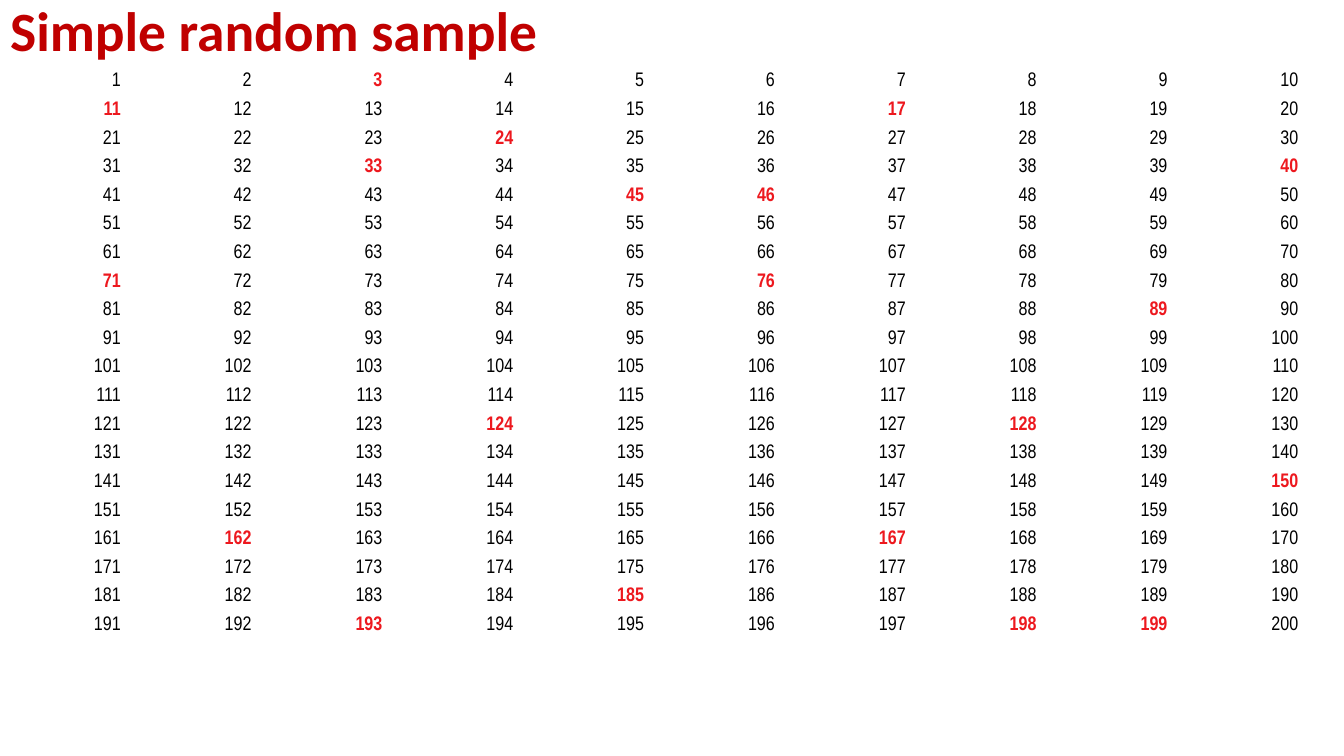
"""Build the slide that marks a simple random sample among the numbers 1 to 200."""
import dataclasses
import typing

import pptx
import pptx.dml.color
import pptx.enum.text
import pptx.slide
import pptx.table
import pptx.text.text
import pptx.util

SLIDE_WIDTH = pptx.util.Inches(13.33)
SLIDE_HEIGHT = pptx.util.Inches(7.5)
COLUMNS, ROWS = 10, 20
TITLE_HEIGHT = pptx.util.Inches(0.67)
COLUMN_WIDTH = pptx.util.Inches(12.98 / COLUMNS)
ROW_HEIGHT = pptx.util.Inches(0.14)
FRAME_HEIGHT = pptx.util.Inches(6.67)
HANGING_INDENT = pptx.util.Inches(0.38)
SAMPLE = {3, 11, 17, 24, 33, 40, 45, 46, 71, 76, 89, 124, 128, 150,
          162, 167, 185, 193, 198, 199}

CELL_FORMAT = {
    "margin_top": pptx.util.Inches(0.05),
    "margin_bottom": pptx.util.Inches(0.05),
    "margin_left": pptx.util.Inches(0.1),
    "margin_right": pptx.util.Inches(0.1),
}
TITLE_PLACE = {"left": 0, "top": 0, "width": SLIDE_WIDTH, "height": TITLE_HEIGHT}
TITLE_FRAME = {
    "auto_size": pptx.enum.text.MSO_AUTO_SIZE.NONE,
    "vertical_anchor": pptx.enum.text.MSO_ANCHOR.MIDDLE,
    "word_wrap": True,
}
PLAIN_TABLE = {"first_row": False, "horz_banding": False}


@dataclasses.dataclass(frozen=True)
class TextStyle:
    """Describe the look of one run of text."""

    font: str
    size: float
    color: str
    bold: bool


TITLE_STYLE = TextStyle("Calibri", 39.6, "C00000", True)
NUMBER_STYLE = TextStyle("Arial Narrow", 14, "000000", False)
SAMPLED_STYLE = dataclasses.replace(NUMBER_STYLE, color="ED181E", bold=True)


def set_attributes(target: typing.Any, values: dict[str, typing.Any]) -> None:
    """Set each named attribute of the target."""
    for name, value in values.items():
        setattr(target, name, value)


def hex_color(value: str) -> pptx.dml.color.RGBColor:
    """Turn a hex string into a colour."""
    return pptx.dml.color.RGBColor.from_string(value)


def write_text(paragraph: pptx.text.text._Paragraph, text: str, style: TextStyle) -> None:
    """Add one styled run to the paragraph."""
    run = paragraph.add_run()
    run.text = text
    set_attributes(run.font, {"name": style.font, "size": pptx.util.Pt(style.size),
                              "bold": style.bold})
    run.font.color.rgb = hex_color(style.color)


def add_title(slide: pptx.slide.Slide, text: str) -> None:
    """Place and fill the title placeholder."""
    title = slide.shapes.title
    set_attributes(title, TITLE_PLACE)
    set_attributes(title.text_frame, TITLE_FRAME)
    paragraph = title.text_frame.paragraphs[0]
    set_attributes(paragraph, {"alignment": pptx.enum.text.PP_ALIGN.LEFT,
                               "line_spacing": 0.9})
    write_text(paragraph, text, TITLE_STYLE)


def fill_cell(cell: pptx.table._Cell, number: int) -> None:
    """Write a number in a clear cell, marked when it is in the sample."""
    set_attributes(cell, CELL_FORMAT)
    cell.fill.background()
    paragraph = cell.text_frame.paragraphs[0]
    paragraph.alignment = pptx.enum.text.PP_ALIGN.RIGHT
    properties = paragraph._p.get_or_add_pPr()
    properties.set("marL", str(HANGING_INDENT))
    properties.set("indent", str(-HANGING_INDENT))
    write_text(paragraph, str(number), SAMPLED_STYLE if number in SAMPLE else NUMBER_STYLE)


def add_number_table(slide: pptx.slide.Slide) -> None:
    """Add the grid of consecutive numbers."""
    frame = slide.shapes.add_table(ROWS, COLUMNS, 0, TITLE_HEIGHT,
                                   COLUMN_WIDTH * COLUMNS, ROW_HEIGHT * ROWS)
    set_attributes(frame.table, PLAIN_TABLE)
    for number, cell in enumerate(frame.table.iter_cells(), start=1):
        fill_cell(cell, number)
    frame.height = FRAME_HEIGHT


def main() -> None:
    """Build and save the presentation."""
    presentation = pptx.Presentation()
    set_attributes(presentation, {"slide_width": SLIDE_WIDTH, "slide_height": SLIDE_HEIGHT})
    slide = presentation.slides.add_slide(presentation.slide_layouts.get_by_name("Title Only"))
    add_title(slide, "Simple random sample")
    add_number_table(slide)
    presentation.save("out.pptx")


if __name__ == "__main__":
    main()
